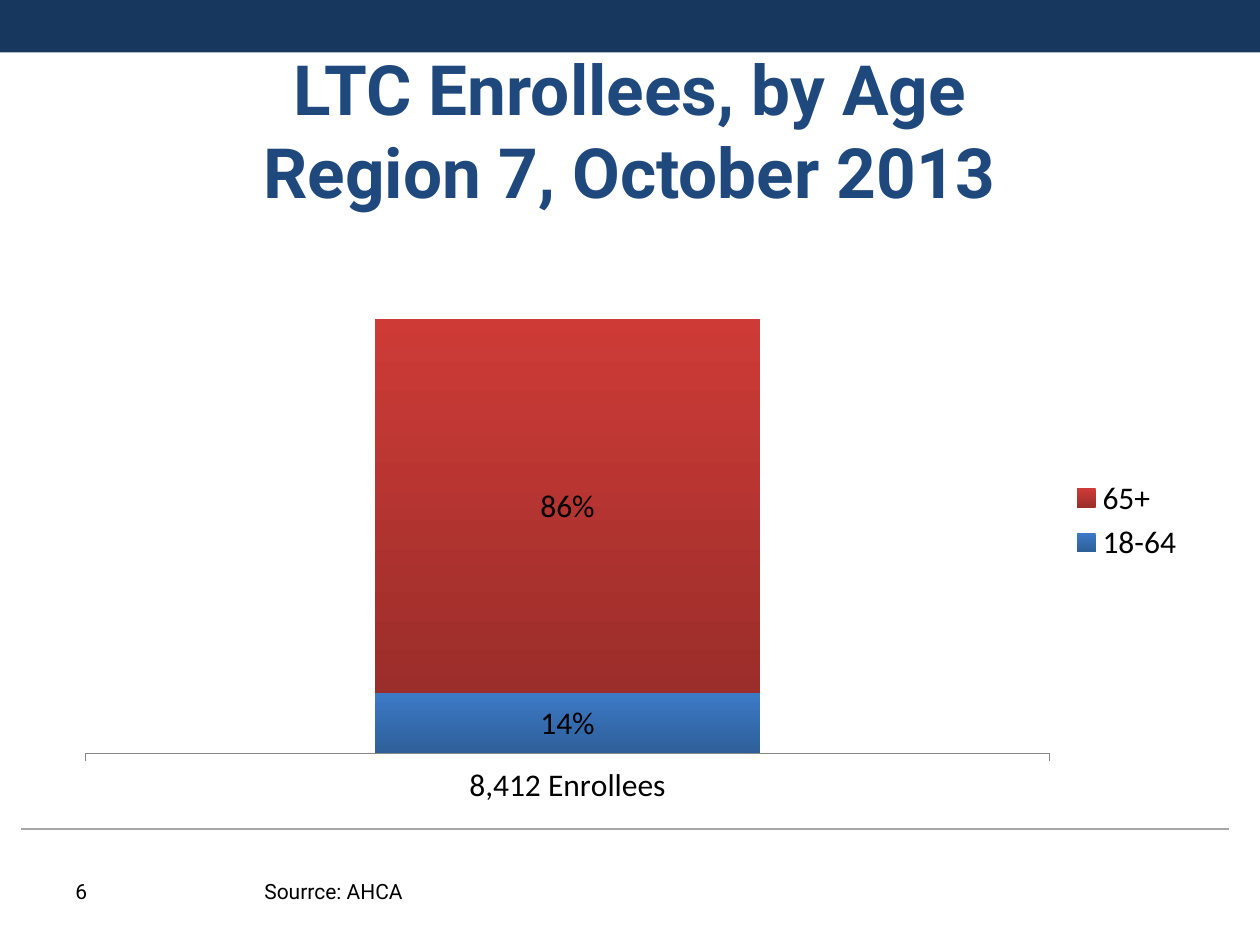
from lxml import etree
from pptx import Presentation
from pptx.chart.data import CategoryChartData
from pptx.dml.color import RGBColor
from pptx.enum.chart import (XL_CHART_TYPE, XL_LABEL_POSITION,
                             XL_LEGEND_POSITION, XL_TICK_MARK)
from pptx.enum.shapes import MSO_CONNECTOR, MSO_SHAPE
from pptx.enum.text import MSO_ANCHOR, MSO_AUTO_SIZE, PP_ALIGN
from pptx.oxml import parse_xml
from pptx.oxml.ns import nsdecls, qn
from pptx.util import Cm, Pt

# Content
TITLE = "LTC Enrollees, by Age\vRegion 7, October 2013"
CATEGORY = "8,412 Enrollees"
SERIES = [  # name, share, top colour, bottom colour
    ("18-64", 0.14, "blue_top", "blue_bottom"),
    ("65+", 0.86, "red_top", "red_bottom"),
]
FOOTERS = [("Sourrce: AHCA", 5.08, 8.05), ("6", 1.27, 3.18)]  # text, left, width
PLOT_AREA = {"x": 0.02, "y": 0.02, "w": 0.85, "h": 0.87}

COLORS = {
    "band": "17375E", "rule": "A6A6A6", "title": "1F497D", "text": "000000",
    "axis": "868686",
    "blue_top": "3C7AC7", "blue_bottom": "2E5F99",
    "red_top": "CE3B37", "red_bottom": "9B2D2A",
}


def color(name):
    return RGBColor.from_string(COLORS[name])


def style(font, size, name, family="Roboto", bold=False):
    font.size, font.name, font.bold = Pt(size), family, bold
    font.color.rgb = color(name)


prs = Presentation()
prs.slide_width, prs.slide_height = Cm(25.4), Cm(19.05)
slide = prs.slides.add_slide(prs.slide_layouts[5])
shapes = slide.shapes

# Top band and footer rule
band = shapes.add_shape(MSO_SHAPE.RECTANGLE, 0, 0, prs.slide_width, Cm(1.06))
band.shadow.inherit = False
band.fill.solid()
band.fill.fore_color.rgb = color("band")
band.line.fill.background()

rule = shapes.add_connector(MSO_CONNECTOR.STRAIGHT, Cm(0.43), Cm(16.71), Cm(24.77), Cm(16.71))
rule.line.color.rgb = color("rule")
rule.line.width = Pt(0.75)
etree.SubElement(rule._element.spPr, qn("a:effectLst"))

# Title
title = shapes.title
title.left, title.top, title.width, title.height = Cm(1.27), Cm(1.27), Cm(22.86), Cm(2.67)
title.text_frame.text = TITLE
title.text_frame.auto_size = MSO_AUTO_SIZE.NONE
title.text_frame.vertical_anchor = MSO_ANCHOR.MIDDLE
heading = title.text_frame.paragraphs[0]
heading.alignment = PP_ALIGN.CENTER
style(heading.font, 39.6, "title", bold=True)

# Stacked column chart
data = CategoryChartData(number_format="0%")
data.categories = [CATEGORY]
for name, share, *_ in SERIES:
    data.add_series(name, [share])
chart = shapes.add_chart(XL_CHART_TYPE.COLUMN_STACKED, Cm(1.27), Cm(4.45),
                         Cm(22.86), Cm(12.07), data).chart
style(chart.font, 18, "text", "Calibri")
chart.has_title = False
chart.has_legend = True
chart.legend.position = XL_LEGEND_POSITION.RIGHT
chart.legend.include_in_layout = False

shares = chart.value_axis
shares.minimum_scale, shares.maximum_scale = 0, 1.2
shares.has_major_gridlines = False
shares.visible = False
ages = chart.category_axis
ages.major_tick_mark = XL_TICK_MARK.OUTSIDE
ages.format.line.color.rgb = color("axis")
ages.format.line.width = Pt(0.75)

columns = chart.plots[0]
columns.gap_width, columns.overlap = 150, 100
columns.vary_by_categories = False
for series, (_, _, top, bottom) in zip(columns.series, SERIES):
    fill = series.format.fill
    fill.gradient()
    fill.gradient_angle = 270
    for stop, shade in zip(fill.gradient_stops, (top, bottom)):
        stop.color.rgb = color(shade)
    labels = series.data_labels
    labels.show_value = True
    labels.number_format, labels.number_format_is_linked = "0%", False
    labels.position = XL_LABEL_POSITION.CENTER

# Fixed inner plot area
plot_area = chart._chartSpace.chart.plotArea
for old in plot_area.findall(qn("c:layout")):
    plot_area.remove(old)
sizes = "".join(f'<c:{side} val="{part}"/>' for side, part in PLOT_AREA.items())
plot_area.insert(0, parse_xml(
    f'<c:layout {nsdecls("c")}><c:manualLayout><c:layoutTarget val="inner"/>'
    f'<c:xMode val="edge"/><c:yMode val="edge"/>{sizes}</c:manualLayout></c:layout>'))

# Source and slide number
for text, left, width in FOOTERS:
    frame = shapes.add_textbox(Cm(left), Cm(17.58), Cm(width), Cm(1.02)).text_frame
    frame.word_wrap = True
    frame.text = text
    style(frame.paragraphs[0].font, 12, "text")

prs.save("out.pptx")
